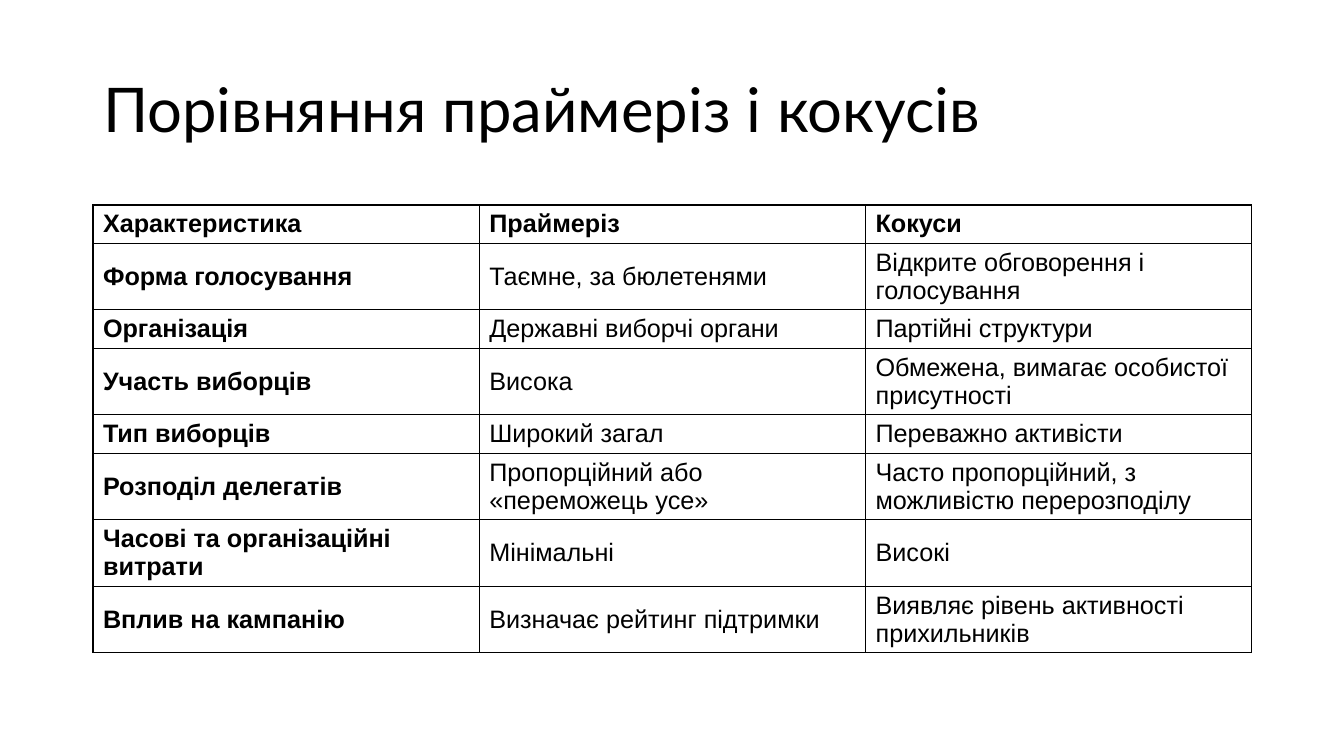
from dataclasses import dataclass

from lxml import etree
from pptx import Presentation
from pptx import util as u
from pptx.dml.color import RGBColor
from pptx.enum import text
from pptx.oxml.ns import qn


@dataclass(frozen=True)
class Theme:
    ink: str = "000000"
    title_font: str = "Lato"
    title_size: int = 44
    table_font: str = "Arial"
    table_size: int = 18
    border: int = 1


THEME = Theme()
PX_PER_INCH = 100.8

ROWS = [
    ("Характеристика", "Праймеріз", "Кокуси"),
    ("Форма голосування", "Таємне, за бюлетенями", "Відкрите обговорення і голосування"),
    ("Організація", "Державні виборчі органи", "Партійні структури"),
    ("Участь виборців", "Висока", "Обмежена, вимагає особистої присутності"),
    ("Тип виборців", "Широкий загал", "Переважно активісти"),
    ("Розподіл делегатів", "Пропорційний або «переможець усе»",
     "Часто пропорційний, з можливістю перерозподілу"),
    ("Часові та організаційні витрати", "Мінімальні", "Високі"),
    ("Вплив на кампанію", "Визначає рейтинг підтримки",
     "Виявляє рівень активності прихильників"),
]


def px(n):
    return u.Emu(round(n * 914400 / PX_PER_INCH))


def style_paragraph(p, font, size, bold=False):
    p.alignment = text.PP_ALIGN.LEFT
    p.font.name = font
    p.font.size = u.Pt(size)
    p.font.bold = bold
    p.font.color.rgb = RGBColor.from_string(THEME.ink)


def add_title(s, title, left, top, width, height):
    sp = s.shapes.title
    sp.left, sp.top, sp.width, sp.height = map(px, (left, top, width, height))
    tf = sp.text_frame
    tf.text = title
    tf.vertical_anchor = text.MSO_ANCHOR.MIDDLE
    p = tf.paragraphs[0]
    p.line_spacing = 0.9
    style_paragraph(p, THEME.title_font, THEME.title_size)


def set_borders(cell):
    # Border lines come before the fill in the cell properties
    tc_pr = cell._tc.get_or_add_tcPr()
    for i, side in enumerate(("lnL", "lnR", "lnT", "lnB")):
        ln = etree.Element(qn(f"a:{side}"), w=str(u.Pt(THEME.border)))
        fill = etree.SubElement(ln, qn("a:solidFill"))
        etree.SubElement(fill, qn("a:srgbClr"), val=THEME.ink)
        tc_pr.insert(i, ln)


def fill_cell(cell, words, bold):
    cell.text = words
    cell.vertical_anchor = text.MSO_ANCHOR.MIDDLE
    cell.fill.background()
    set_borders(cell)
    style_paragraph(cell.text_frame.paragraphs[0], THEME.table_font, THEME.table_size, bold)


def add_comparison(s, rows, left, top, width, height, min_row):
    frame = s.shapes.add_table(len(rows), len(rows[0]), *map(px, (left, top, width, height)))
    table = frame.table
    table.first_row = table.horz_banding = False
    for i, row in enumerate(rows):
        table.rows[i].height = px(min_row)  # rows grow with their text
        for j, words in enumerate(row):
            fill_cell(table.cell(i, j), words, bold=i == 0 or j == 0)
    frame.height = px(height)


def main():
    prs = Presentation()
    prs.slide_width, prs.slide_height = px(1344), px(756)
    s = prs.slides.add_slide(prs.slide_layouts[5])

    # Heading
    add_title(s, "Порівняння праймеріз і кокусів", 93, 40, 1159, 146)

    # Comparison table
    add_comparison(s, ROWS, 93, 205, 1159, 474, min_row=25)

    prs.save("out.pptx")


if __name__ == "__main__":
    main()
